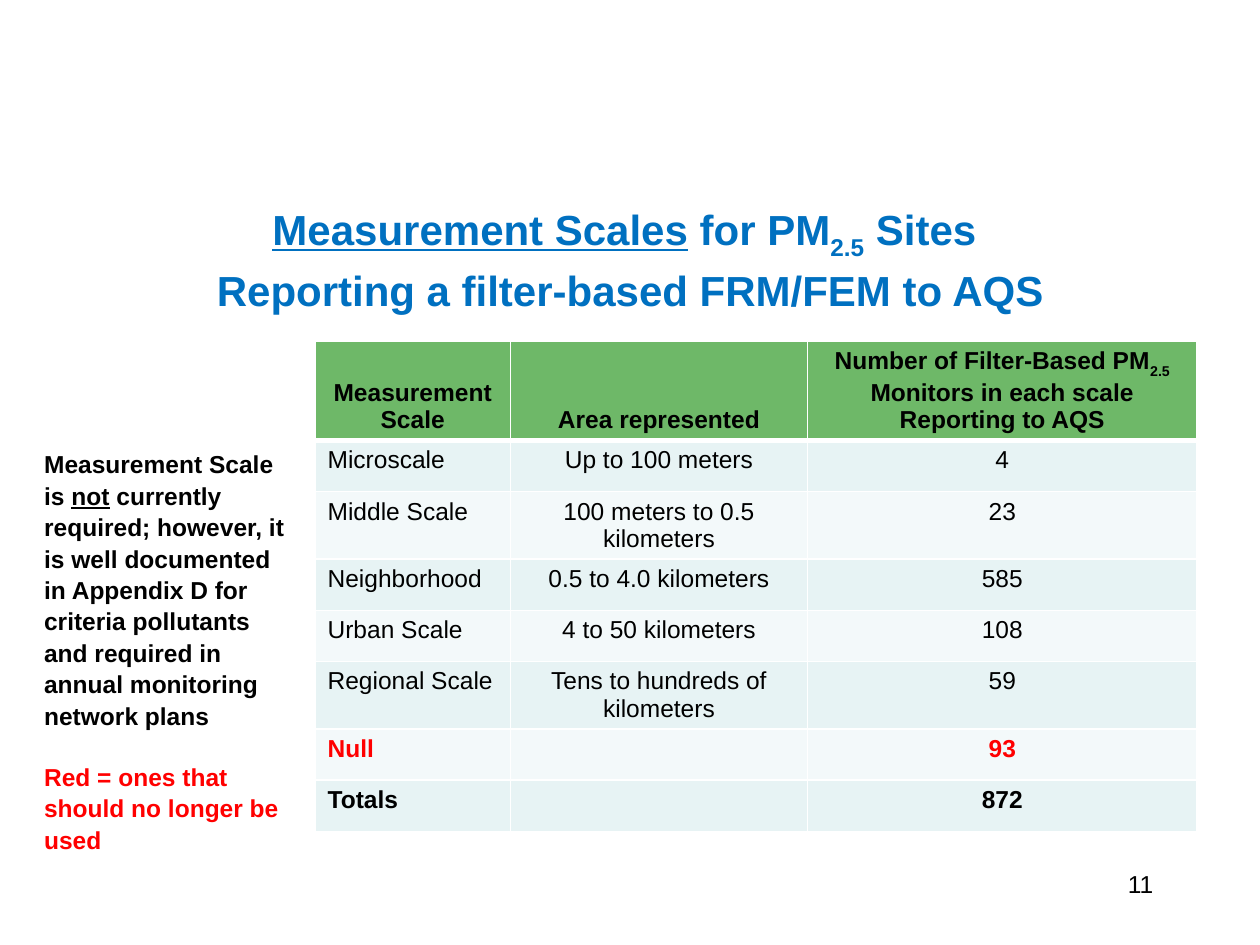
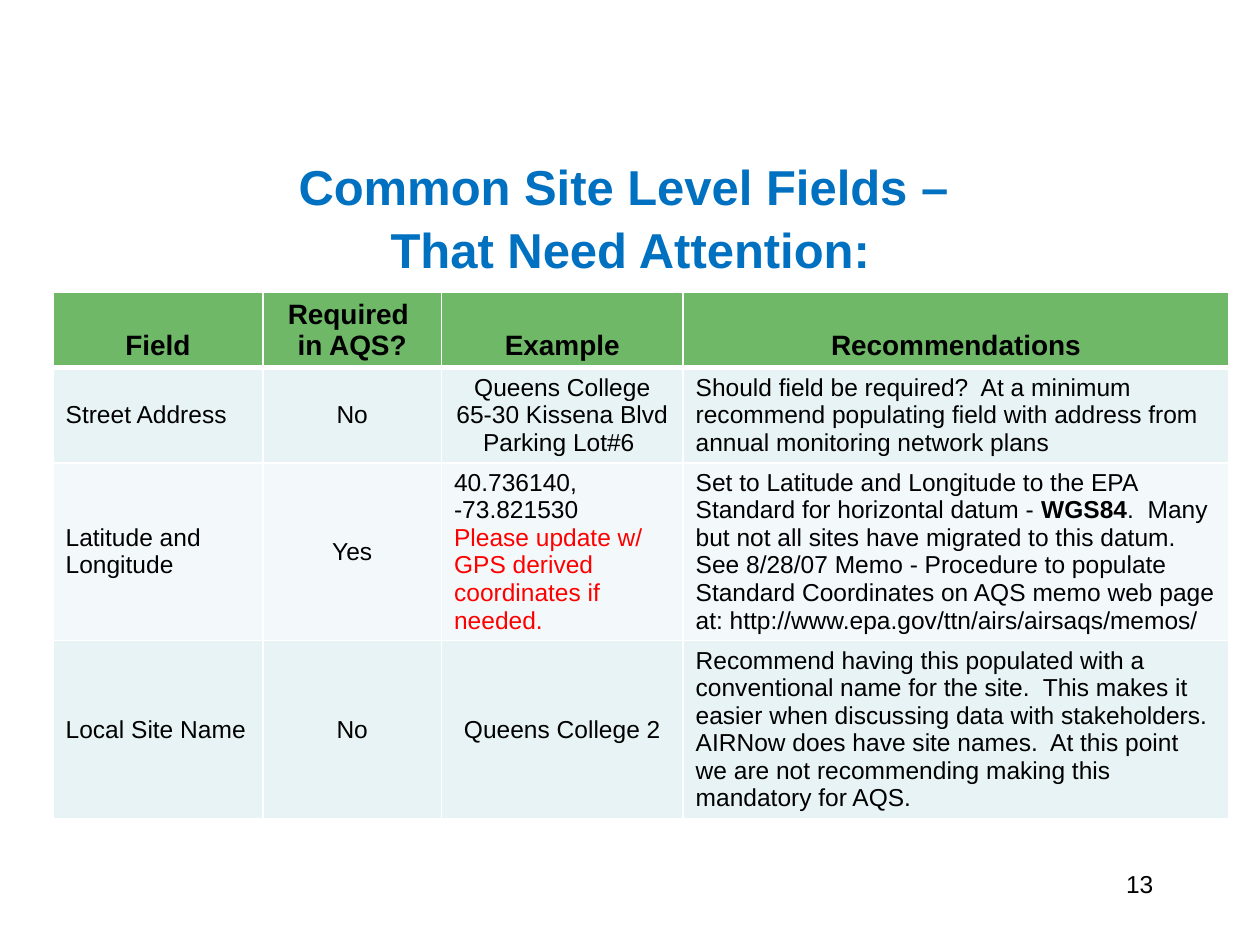
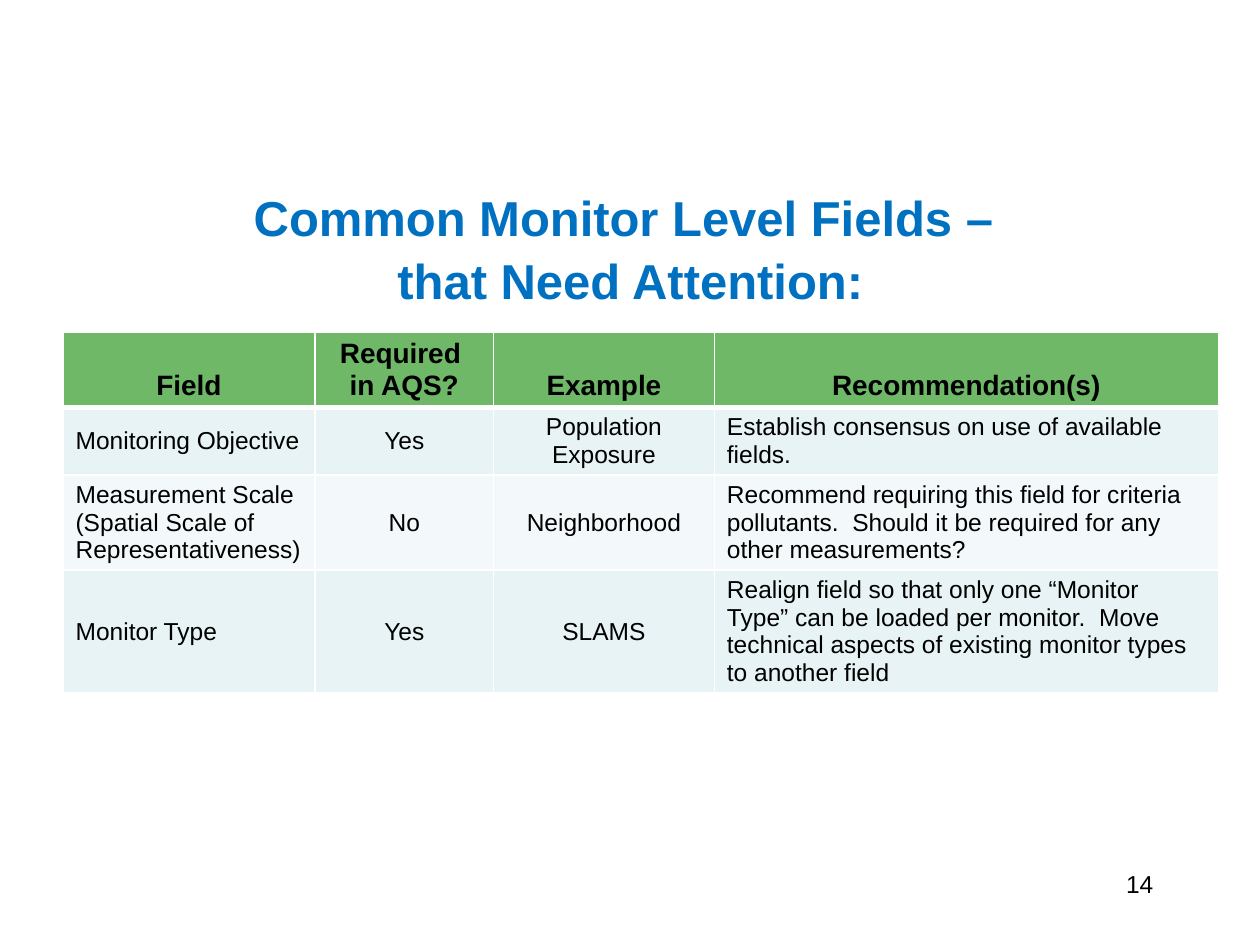
import pptx
import pptx.util
import pptx.dml.color
import pptx.enum.text
import pptx.oxml
import pptx.oxml.ns

Cm, Pt = pptx.util.Cm, pptx.util.Pt
ALIGN = pptx.enum.text.PP_ALIGN
ANCHOR = pptx.enum.text.MSO_ANCHOR
COLORS = {"title": "0070C0", "text": "000000", "alert": "FF0000", "line": "FFFFFF",
          "header": "6EB868", "odd": "E7F3F4", "even": "F3F9FA"}
RGB = {k: pptx.dml.color.RGBColor.from_string(v) for k, v in COLORS.items()}
SUB, BOLD, UNDER = {"sub": True}, {"bold": True}, {"underline": True}
RED, RED_BOLD = {"color": "alert"}, {"color": "alert", "bold": True}
LINE_SPACING = 1.07


def write(tf, paragraphs, align=None, spacing=None, **base):
    """Fill a text frame; a paragraph is a string or a list of (text, format) runs."""
    for i, runs in enumerate(paragraphs):
        p = tf.paragraphs[0] if i == 0 else tf.add_paragraph()
        p.alignment, p.line_spacing = align, spacing
        for text, fmt in [(runs, {})] if isinstance(runs, str) else runs:
            fmt = {"name": "Arial", "color": "text", "bold": False, **base, **fmt}
            color, sub = fmt.pop("color"), fmt.pop("sub", False)
            for j, part in enumerate(text.split("\n")):
                if j:
                    p.add_line_break()
                r = p.add_run()
                r.text = part
                for key, value in fmt.items():
                    setattr(r.font, key, value)
                r.font.color.rgb = RGB[color]
                if sub:
                    r.font._element.set("baseline", "-25000")


def add_borders(cell, **widths):
    """Draw white cell borders; widths are points by side."""
    for side in "LRTB":
        cell._tc.get_or_add_tcPr().append(pptx.oxml.parse_xml(
            f'<a:ln{side} {pptx.oxml.ns.nsdecls("a")} w="{Pt(widths.get(side, 1))}">'
            f'<a:solidFill><a:srgbClr val="{COLORS["line"]}"/></a:solidFill></a:ln{side}>'))


FIELD_HEADER = [["Field"], ["Required ", "in AQS?"], ["Example"]]

# Each cell is a list of paragraphs
slides = [
    {"number": "11", "title_top": 3.81, "title_size": 24,
     "title": [("Measurement Scales", UNDER), (" for PM", {}), ("2.5", SUB),
               (" Sites \nReporting a filter-based FRM/FEM to AQS", {})],
     "left": 6.35, "top": 6.88, "widths": [3.94, 5.99, 7.85],
     "header_size": 14, "anchor": ANCHOR.TOP, "left_columns": [0],
     "rows": [
         [["Measurement Scale"], ["Area represented"],
          [[("Number of Filter-Based PM", {}), ("2.5", SUB),
            (" Monitors in each scale Reporting to AQS", {})]]],
         [["Microscale"], ["Up to 100 meters"], ["4"]],
         [["Middle Scale"], ["100 meters to 0.5 kilometers"], ["23"]],
         [["Neighborhood"], ["0.5 to 4.0 kilometers"], ["585"]],
         [["Urban Scale"], ["4 to 50 kilometers"], ["108"]],
         [["Regional Scale"], ["Tens to hundreds of kilometers"], ["59"]],
         [[[("Null", RED_BOLD)]], [], [[("93", RED_BOLD)]]],
         [[[("Totals", BOLD)]], [], [[("872", BOLD)]]]]},
    {"number": "13", "title_top": 2.97, "title_size": 28,
     "title": [("Common Site Level Fields – \nThat Need Attention:", {})],
     "left": 1.07, "top": 5.9, "widths": [4.23, 3.6, 4.87, 11],
     "header_size": 16, "anchor": ANCHOR.MIDDLE, "left_columns": [0, 3],
     "rows": [
         FIELD_HEADER + [["Recommendations"]],
         [["Street Address"], ["No"],
          ["Queens College 65-30 Kissena Blvd Parking Lot#6 "],
          ["Should field be required?  At a minimum recommend populating field with "
           "address from annual monitoring network plans"]],
         [["Latitude and Longitude"], ["Yes"],
          ["40.736140,", "-73.821530",
           [("Please update w/ GPS derived coordinates if needed.", RED)]],
          [[("Set to Latitude and Longitude to the EPA Standard for horizontal datum - ", {}),
            ("WGS84", BOLD),
            (".  Many but not all sites have migrated to this datum.", {})],
           "See 8/28/07 Memo - Procedure to populate Standard Coordinates on AQS memo "
           "web page at: http://www.epa.gov/ttn/airs/airsaqs/memos/"]],
         [["Local Site Name"], ["No"], ["Queens College 2"],
          ["Recommend having this populated with a conventional name for the site.  This "
           "makes it easier when discussing data with stakeholders.  AIRNow does have site "
           "names.  At this point we are not recommending making this mandatory for AQS."]]]},
    {"number": "14", "title_top": 3.6, "title_size": 28,
     "title": [("Common Monitor Level Fields – \nthat Need Attention:", {})],
     "left": 1.27, "top": 6.7, "widths": [5.08, 3.6, 4.45, 10.16],
     "header_size": 16, "anchor": ANCHOR.MIDDLE, "left_columns": [0, 3],
     "rows": [
         FIELD_HEADER + [["Recommendation(s)"]],
         [["Monitoring Objective"], ["Yes"], ["Population Exposure"],
          ["Establish consensus on use of available fields."]],
         [["Measurement Scale (Spatial Scale of Representativeness)"], ["No"],
          ["Neighborhood"],
          ["Recommend requiring this field for criteria pollutants.  Should it be "
           "required for any other measurements?"]],
         [["Monitor Type"], ["Yes"], ["SLAMS"],
          ["Realign field so that only one “Monitor Type” can be loaded per monitor.  "
           "Move technical aspects of existing monitor types to another field"]]]},
]

prs = pptx.Presentation()
prs.slide_width, prs.slide_height = Cm(25.4), Cm(19.05)

for data in slides:
    s = prs.slides.add_slide(prs.slide_layouts[5])

    # Title
    sp = s.shapes.title
    sp.left, sp.top, sp.width, sp.height = Cm(2.12), Cm(data["title_top"]), Cm(21.17), Cm(2.75)
    tf = sp.text_frame
    tf.auto_size = pptx.enum.text.MSO_AUTO_SIZE.NONE
    tf.vertical_anchor = ANCHOR.MIDDLE
    write(tf, [data["title"]], ALIGN.CENTER, LINE_SPACING,
          size=Pt(data["title_size"]), color="title", bold=True)

    # Table
    rows, widths = data["rows"], data["widths"]
    table = s.shapes.add_table(len(rows), len(widths), Cm(data["left"]), Cm(data["top"]),
                               Cm(sum(widths)), Cm(1.03 * len(rows))).table
    table.horz_banding = False
    for column, width in zip(table.columns, widths):
        column.width = Cm(width)
    for i, row in enumerate(rows):
        for j, paragraphs in enumerate(row):
            cell = table.cell(i, j)
            header = i == 0
            add_borders(cell, T=3 if i == 1 else 1, B=3 if header else 1)
            cell.fill.solid()
            cell.fill.fore_color.rgb = RGB["header" if header else "odd" if i % 2 else "even"]
            cell.vertical_anchor = ANCHOR.BOTTOM if header else data["anchor"]
            at_left = not header and (j in data["left_columns"] or len(paragraphs) > 1)
            write(cell.text_frame, paragraphs, ALIGN.LEFT if at_left else ALIGN.CENTER,
                  size=Pt(data["header_size"] if header else 14), bold=header)

    # Page number
    tf = s.shapes.add_textbox(Cm(18.2), Cm(17.36), Cm(5.3), Cm(1.27)).text_frame
    tf.word_wrap = True
    write(tf, [data["number"]], ALIGN.RIGHT, LINE_SPACING, size=Pt(14))

# Side note on the measurement scales slide
tf = prs.slides[0].shapes.add_textbox(Cm(0.64), Cm(8.89), Cm(5.5), Cm(8.03)).text_frame
tf.word_wrap = True
write(tf, ["Measurement Scale",
           [("is ", {}), ("not", UNDER),
            (" currently required; however, it is well documented in Appendix D for criteria "
             "pollutants and required in annual monitoring network plans", {})],
           [("Red = ones that", RED)], [("should no longer be", RED)], [("used", RED)]],
      spacing=LINE_SPACING, size=Pt(14), bold=True)
tf.paragraphs[2].space_before = Pt(16.8)

prs.save("out.pptx")
